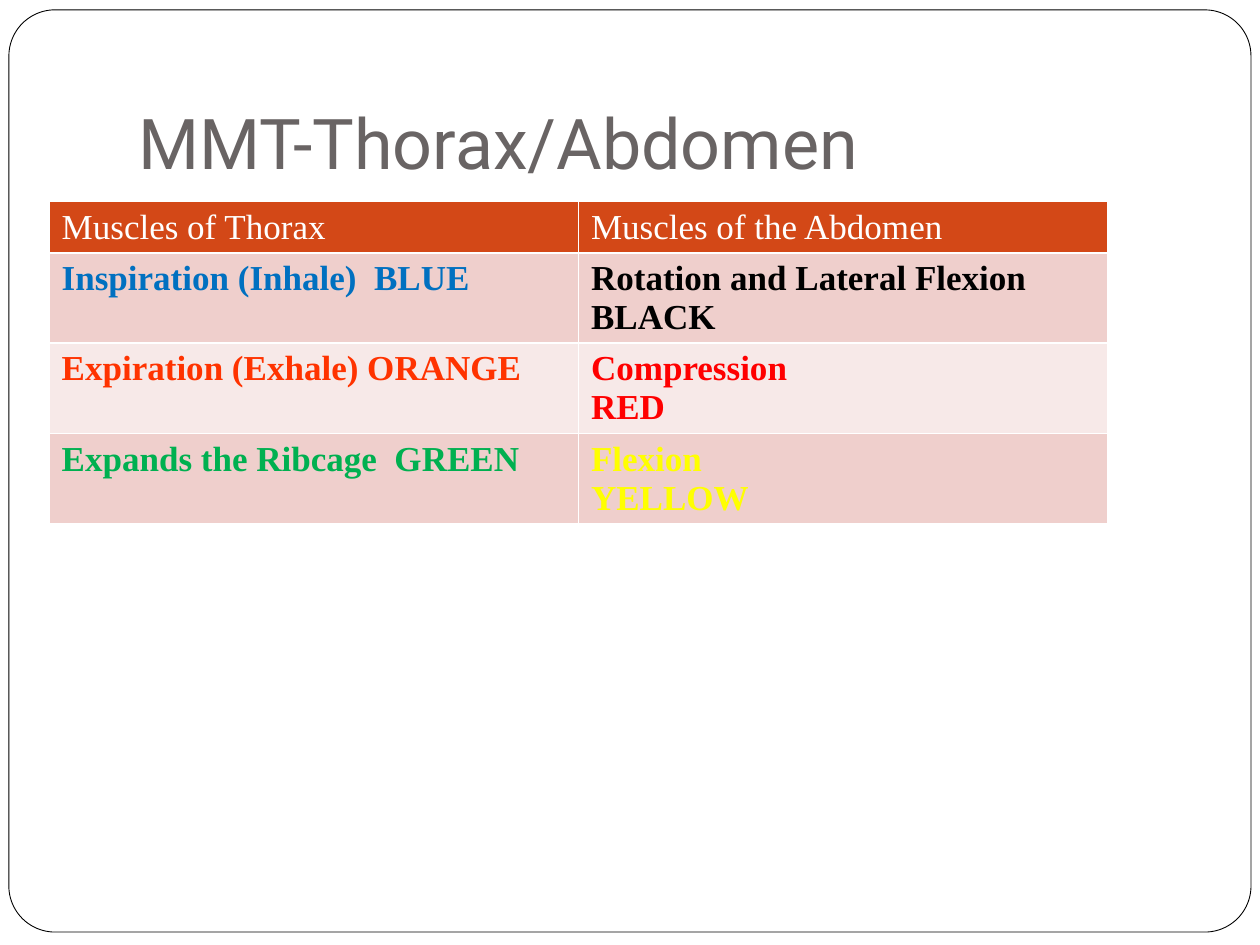
import pptx
import pptx.util
import pptx.dml.color
import pptx.enum.shapes
import pptx.enum.text

Cm = pptx.util.Cm
Pt = pptx.util.Pt
RGBColor = pptx.dml.color.RGBColor

WHITE = RGBColor(0xFF, 0xFF, 0xFF)
BLACK = RGBColor(0x00, 0x00, 0x00)
GREY = RGBColor(0x69, 0x64, 0x64)
BLUE = RGBColor(0x00, 0x70, 0xC0)
ORANGE = RGBColor(0xFF, 0x33, 0x00)
RED = RGBColor(0xFF, 0x00, 0x00)
GREEN = RGBColor(0x00, 0xB0, 0x50)
YELLOW = RGBColor(0xFF, 0xFF, 0x00)
HEADER_FILL = RGBColor(0xD3, 0x48, 0x17)
BAND_FILLS = (RGBColor(0xEF, 0xCF, 0xCC), RGBColor(0xF7, 0xE9, 0xE8))

# Content: each cell is its text and colour
TITLE = "MMT-Thorax/Abdomen"
ROWS = [
    [("Muscles of Thorax", WHITE), ("Muscles of the Abdomen", WHITE)],
    [("Inspiration (Inhale)  BLUE", BLUE),
     ("Rotation and Lateral Flexion BLACK", BLACK)],
    [("Expiration (Exhale) ORANGE", ORANGE), ("Compression\nRED", RED)],
    [("Expands the Ribcage  GREEN", GREEN), ("Flexion\nYELLOW", YELLOW)],
]
COLUMN_WIDTH = Cm(10.67)
ROW_HEIGHT = Cm(1.03)


def write_text(frame, text, *, font, size, color, bold=False):
    frame.text = text
    for paragraph in frame.paragraphs:
        paragraph.alignment = pptx.enum.text.PP_ALIGN.LEFT
        for run in paragraph.runs:
            run.font.name = font
            run.font.size = Pt(size)
            run.font.bold = bold
            run.font.color.rgb = color


def add_border(slide):
    border = slide.shapes.add_shape(
        pptx.enum.shapes.MSO_SHAPE.ROUNDED_RECTANGLE,
        Cm(0.18), Cm(0.2), Cm(25.04), Cm(18.59))
    border.adjustments[0] = 0.05
    border.shadow.inherit = False
    border.fill.solid()
    border.fill.fore_color.rgb = WHITE
    border.line.color.rgb = BLACK
    border.line.width = Pt(0.5)
    # Keep the border behind the title
    slide.shapes.title.element.addprevious(border.element)


def format_title(title):
    title.left, title.top = Cm(2.54), Cm(0.76)
    title.width, title.height = Cm(21.59), Cm(3.18)
    frame = title.text_frame
    write_text(frame, TITLE, font="Roboto", size=40, color=GREY)
    frame.word_wrap = True
    frame.auto_size = pptx.enum.text.MSO_AUTO_SIZE.NONE
    frame.vertical_anchor = pptx.enum.text.MSO_ANCHOR.BOTTOM
    frame.margin_left = frame.margin_right = frame.margin_bottom = Cm(0.25)
    frame.margin_top = Cm(0.13)


def add_muscle_table(slide):
    columns = len(ROWS[0])
    table = slide.shapes.add_table(
        len(ROWS), columns, Cm(0.99), Cm(4.06),
        COLUMN_WIDTH * columns, ROW_HEIGHT * len(ROWS)).table
    for row_index, row in enumerate(ROWS):
        is_header = row_index == 0
        fill = HEADER_FILL if is_header else BAND_FILLS[(row_index - 1) % 2]
        for column_index, (text, color) in enumerate(row):
            cell = table.cell(row_index, column_index)
            cell.fill.solid()
            cell.fill.fore_color.rgb = fill
            write_text(cell.text_frame, text, font="Times New Roman",
                       size=20, color=color, bold=not is_header)


def main():
    presentation = pptx.Presentation()
    presentation.slide_width = Cm(25.4)
    presentation.slide_height = Cm(19.05)
    slide = presentation.slides.add_slide(presentation.slide_layouts[5])
    add_border(slide)
    format_title(slide.shapes.title)
    add_muscle_table(slide)
    presentation.save("out.pptx")


if __name__ == "__main__":
    main()
